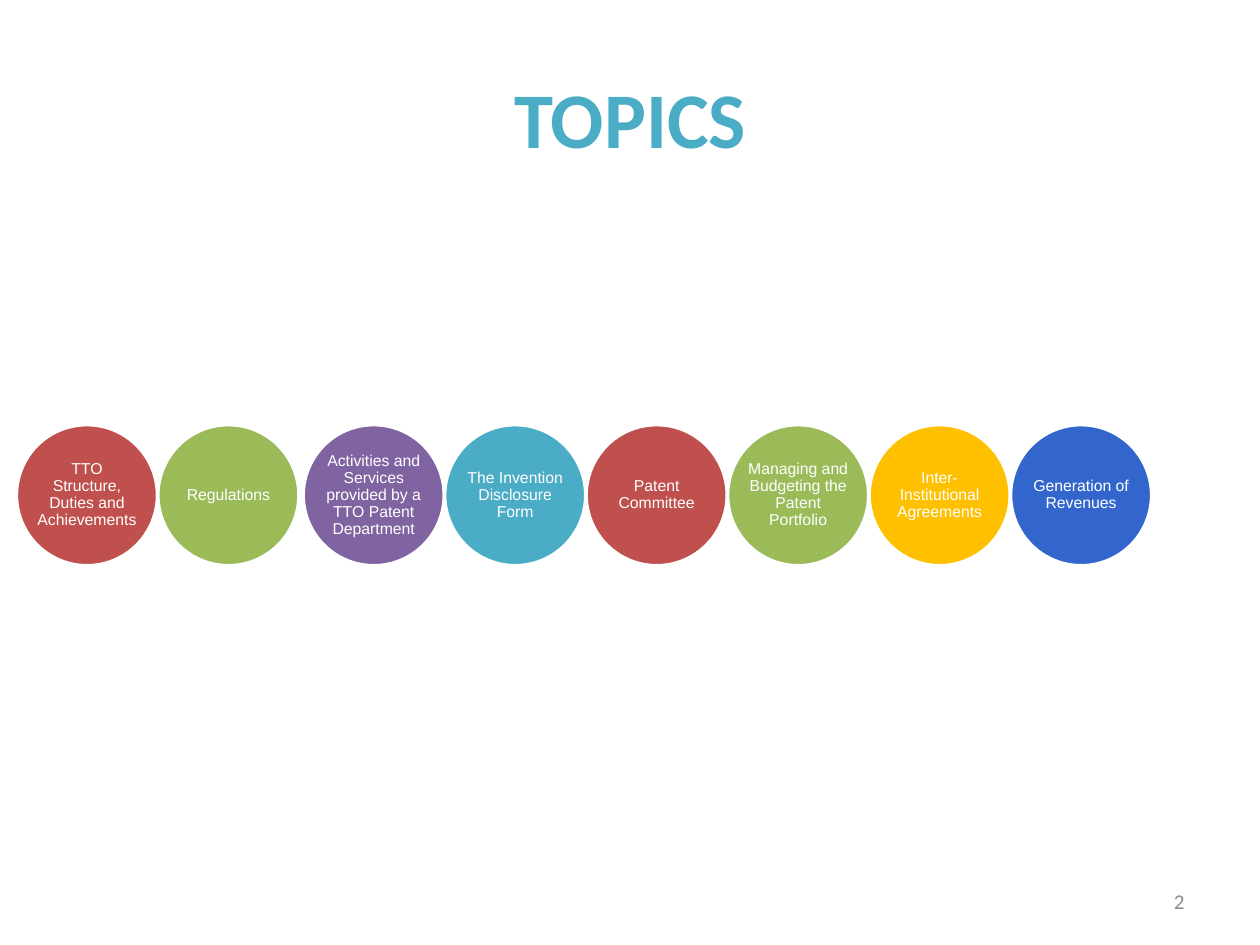
from pptx import Presentation
from pptx.dml.color import RGBColor as RGB
from pptx.enum.shapes import MSO_SHAPE as Shape
from pptx.enum.text import MSO_ANCHOR as Anchor, MSO_AUTO_SIZE as Fit, PP_ALIGN as Align
from pptx.util import Inches, Pt

THEME = {
    "red": "C0504D", "green": "9BBB59", "purple": "8064A2", "teal": "4BACC6",
    "gold": "FFC000", "blue": "3366CC", "white": "FFFFFF", "gray": "8C8C8C",
    "title": {"name": "Calibri", "size": Pt(45), "bold": True},
    "topic": {"name": "Arial", "size": Pt(9), "bold": False},
    "number": {"name": "Calibri", "size": Pt(12), "bold": False},
}
TOPICS = [
    ("TTO Structure, Duties and Achievements", "red"),
    ("Regulations", "green"),
    ("Activities and Services provided by a TTO Patent Department", "purple"),
    ("The Invention Disclosure Form", "teal"),
    ("Patent Committee", "red"),
    ("Managing and Budgeting the Patent Portfolio", "green"),
    ("Inter-Institutional Agreements", "gold"),
    ("Generation of Revenues", "blue"),
]


def place(shape, *box):
    shape.left, shape.top, shape.width, shape.height = map(Inches, box)


def write(shape, text, style, color, align=Align.CENTER):
    """Fill the shape with one paragraph in a style of the theme."""
    frame = shape.text_frame
    frame.text = text
    for key, val in {"word_wrap": True, "auto_size": Fit.NONE,
                     "vertical_anchor": Anchor.MIDDLE}.items():
        setattr(frame, key, val)
    para = frame.paragraphs[0]
    para.alignment = align
    font = para.runs[0].font
    for key, val in THEME[style].items():
        setattr(font, key, val)
    font.color.rgb = RGB.from_string(THEME[color])
    return para


deck = Presentation()
deck.slide_width, deck.slide_height = Inches(10), Inches(7.5)
slide = deck.slides.add_slide(deck.slide_layouts[5])

title = slide.shapes.title
place(title, 0.5, 0.3, 9, 1.25)
write(title, "TOPICS", "title", "teal")

number = slide.shapes.add_textbox(0, 0, 0, 0)
place(number, 7.17, 6.95, 2.33, 0.4)
write(number, "2", "number", "gray", Align.RIGHT)

# The row is one even grid; the first two circles sit slightly to the left.
SIZE, TOP, START, STEP, SHIFT = 1.12, 3.37, 0.13, 1.12, 0.03
STEP = (8.02 - START - SHIFT) / (len(TOPICS) - 1)
for col, (text, color) in enumerate(TOPICS):
    left = START + col * STEP + (SHIFT if col > 1 else 0)
    disc = slide.shapes.add_shape(Shape.OVAL, 0, 0, 0, 0)
    place(disc, left, TOP, SIZE, SIZE)
    disc.shadow.inherit = False
    disc.fill.solid()
    disc.fill.fore_color.rgb = RGB.from_string(THEME[color])
    disc.line.color.rgb = RGB.from_string(THEME["white"])
    disc.line.width = Pt(2)
    for side in ("left", "right", "top", "bottom"):
        setattr(disc.text_frame, f"margin_{side}", 0)
    write(disc, text, "topic", "white").line_spacing = 0.9

deck.save("out.pptx")
